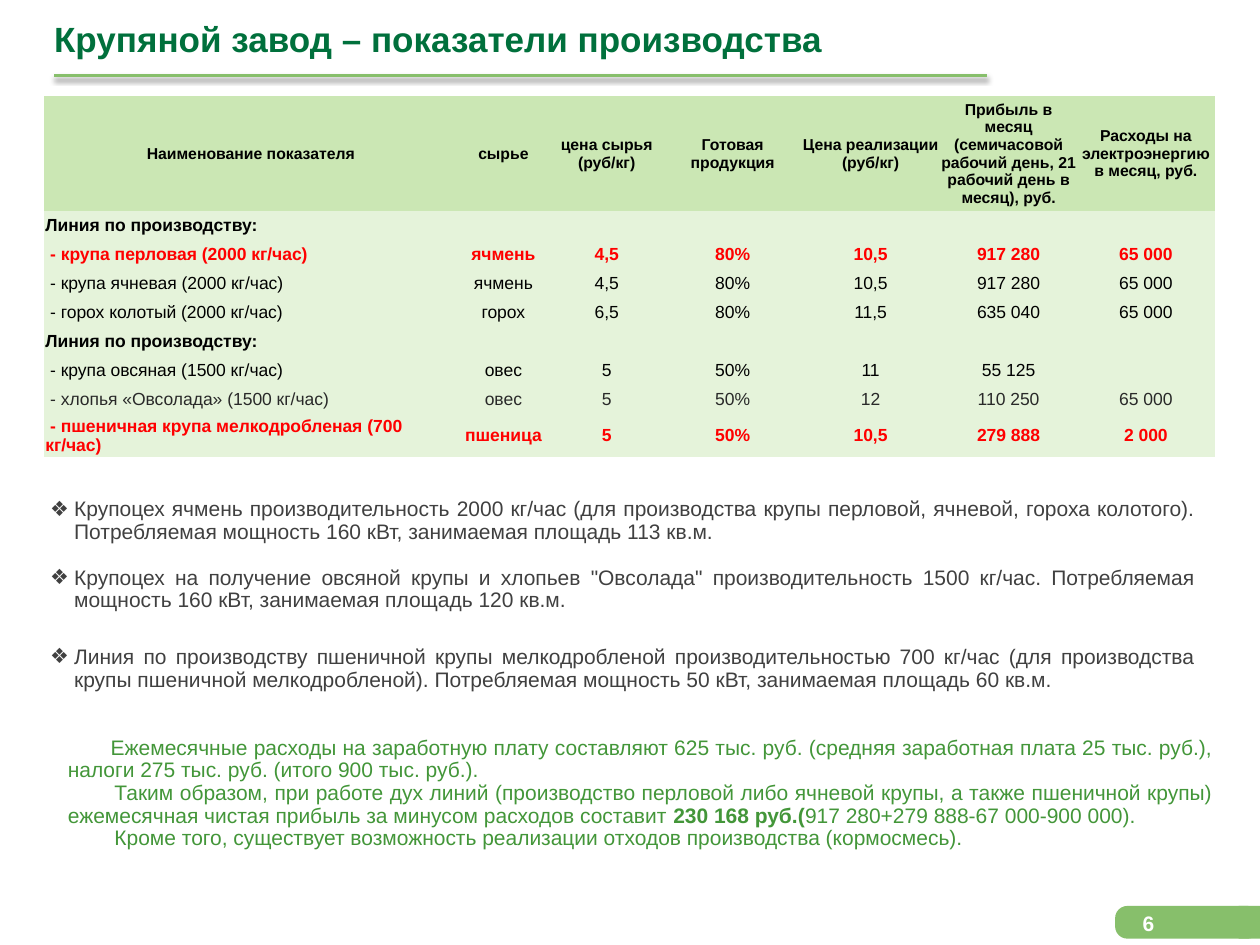
import pptx
import pptx.util
import pptx.dml.color
import pptx.enum.shapes
import pptx.enum.text
import pptx.oxml
import pptx.oxml.ns
from lxml import etree

Inches, Pt = pptx.util.Inches, pptx.util.Pt
Align = pptx.enum.text.PP_ALIGN
Anchor = pptx.enum.text.MSO_ANCHOR
Shape = pptx.enum.shapes.MSO_SHAPE
qn = pptx.oxml.ns.qn

TITLE = "Крупяной завод – показатели производства"
HEADS = [
    "Наименование показателя", "сырье", "цена сырья (руб/кг)",
    "Готовая продукция", "Цена реализации (руб/кг)",
    "Прибыль в месяц (семичасовой рабочий день, 21 рабочий день в месяц), руб.",
    "Расходы на электроэнергию в месяц, руб.",
]
GROUP = ["Линия по производству:", "", "", "", "", "", ""]
ROWS = [
    ("head", HEADS),
    ("group", GROUP),
    ("best", [" - крупа перловая (2000 кг/час)", "ячмень", "4,5", "80%", "10,5", "917 280", "65 000"]),
    ("plain", [" - крупа ячневая (2000 кг/час)", "ячмень", "4,5", "80%", "10,5", "917 280", "65 000"]),
    ("plain", [" - горох колотый (2000 кг/час)", "горох", "6,5", "80%", "11,5", "635 040", "65 000"]),
    ("group", GROUP),
    ("plain", [" - крупа овсяная (1500 кг/час)", "овес", "5", "50%", "11", "55 125", ""]),
    ("soft", [" - хлопья «Овсолада» (1500 кг/час)", "овес", "5", "50%", "12", "110 250", "65 000"]),
    ("best", [" - пшеничная крупа мелкодробленая (700 кг/час)", "пшеница", "5", "50%", "10,5", "279 888", "2 000"]),
]
STYLES = {
    "head": (9, "000000", True, "CBE7B4"),
    "group": (10, "000000", True, "E5F3DA"),
    "best": (10, "FF0000", True, "E5F3DA"),
    "plain": (10, "000000", False, "E5F3DA"),
    "soft": (10, "292929", False, "E5F3DA"),
}
WIDTHS = [3.28, 0.73, 0.91, 1.09, 1.1, 1.09, 1.09]
HEIGHTS = [0.86] + [0.23] * 7 + [0.31]
LINES = [
    (0, "Крупоцех ячмень производительность 2000 кг/час (для производства крупы перловой, ячневой, гороха колотого). Потребляемая мощность 160 кВт, занимаемая площадь 113 кв.м."),
    (13, "Крупоцех на получение овсяной крупы и хлопьев \"Овсолада\" производительность 1500 кг/час. Потребляемая мощность 160 кВт, занимаемая площадь 120 кв.м."),
    (19.5, "Линия по производству пшеничной крупы мелкодробленой производительностью 700 кг/час (для производства крупы пшеничной мелкодробленой). Потребляемая мощность 50 кВт, занимаемая площадь 60 кв.м."),
]
NOTES = [
    (0.34, [("Ежемесячные расходы на заработную плату составляют 625 тыс. руб. (средняя заработная плата 25 тыс. руб.), налоги 275 тыс. руб. (итого 900 тыс. руб.).", False)]),
    (0.37, [
        ("Таким образом, при работе дух линий (производство перловой либо ячневой крупы, а также пшеничной крупы) ежемесячная чистая прибыль за минусом расходов составит ", False),
        ("230 168 руб.(", True),
        ("917 280+279 888-67 000-900 000).", False),
    ]),
    (0.37, [("Кроме того, существует возможность реализации отходов производства (кормосмесь).", False)]),
]
GREEN = "87BF6B"


def color(code):
    return pptx.dml.color.RGBColor.from_string(code)


def apply(item, vals):
    for key, val in vals.items():
        setattr(item, key, val)


def write(para, text, size, ink, bold=False):
    run = para.add_run()
    run.text = text
    apply(run.font, {"name": "Arial", "size": Pt(size), "bold": bold})
    run.font.color.rgb = color(ink)


def space(para, align, before=0, line=0.9):
    apply(para, {"alignment": align, "line_spacing": line, "space_before": Pt(before)})


def indent(para, left, first):
    props = para._p.get_or_add_pPr()
    for key, val in (("marL", left), ("indent", first)):
        props.set(key, str(int(Inches(val))))
    return props


def add_box(slide, area, **vals):
    frame = slide.shapes.add_textbox(*map(Inches, area)).text_frame
    apply(frame, {"word_wrap": True, **vals})
    return frame


def next_para(frame, first):
    return frame.paragraphs[0] if first else frame.add_paragraph()


def add_tab(slide):
    for kind, left, width in ((Shape.ROUNDED_RECTANGLE, 8.85, 1.15), (Shape.RECTANGLE, 9.83, 0.17)):
        tab = slide.shapes.add_shape(kind, *map(Inches, (left, 7.19, width, 0.26)))
        tab.shadow.inherit = False
        tab.fill.solid()
        tab.fill.fore_color.rgb = color(GREEN)
        tab.line.fill.background()
        if kind == Shape.ROUNDED_RECTANGLE:
            tab.adjustments[0] = 0.375
    frame = add_box(slide, (8.97, 7.2, 0.7, 0.25), vertical_anchor=Anchor.MIDDLE)
    write(frame.paragraphs[0], "6", 12, "FFFFFF", True)


def add_title(slide):
    ends = map(Inches, (0.43, 0.6, 7.83, 0.6))
    rule = slide.shapes.add_connector(pptx.enum.shapes.MSO_CONNECTOR.STRAIGHT, *ends)
    rule.line.color.rgb = color(GREEN)
    rule.line.width = Pt(2)
    glow = etree.SubElement(rule._element.spPr, qn("a:effectLst"))
    shade = etree.SubElement(glow, qn("a:outerShdw"), blurRad=str(Pt(3.1)), dist=str(Pt(1.6)), dir="5400000", rotWithShape="0")
    tone = etree.SubElement(shade, qn("a:srgbClr"), val="000000")
    etree.SubElement(tone, qn("a:alpha"), val="38000")
    sides = ("margin_left", "margin_top", "margin_right", "margin_bottom")
    frame = add_box(slide, (0.43, 0.05, 7.4, 0.55), vertical_anchor=Anchor.MIDDLE, **dict.fromkeys(sides, 0))
    space(frame.paragraphs[0], Align.LEFT)
    write(frame.paragraphs[0], TITLE, 20, "00703C", True)


def add_grid(slide):
    area = map(Inches, (0.35, 0.76, sum(WIDTHS), sum(HEIGHTS)))
    table = slide.shapes.add_table(len(ROWS), len(WIDTHS), *area).table
    apply(table, {"first_row": False, "horz_banding": False})
    table._tbl.tblPr.find(qn("a:tableStyleId")).text = "{2D5ABB26-0587-4C30-8999-92F81FD0307C}"
    for col, width in zip(table.columns, WIDTHS):
        col.width = Inches(width)
    pad = Inches(0.01)
    for row, height, (kind, texts) in zip(table.rows, HEIGHTS, ROWS):
        row.height = Inches(height)
        size, ink, bold, fill = STYLES[kind]
        for num, (cell, text) in enumerate(zip(row.cells, texts)):
            apply(cell, {"margin_left": pad, "margin_top": pad, "margin_right": pad,
                         "margin_bottom": 0, "vertical_anchor": Anchor.MIDDLE})
            cell.fill.solid()
            cell.fill.fore_color.rgb = color(fill)
            para = cell.text_frame.paragraphs[0]
            space(para, Align.LEFT if num == 0 and kind != "head" else Align.CENTER, line=1.0)
            if text:
                write(para, text, size, ink, bold)
            else:
                etree.SubElement(para._p, qn("a:endParaRPr"), sz=str(size * 100))


def add_lines(slide):
    frame = add_box(slide, (0.3, 3.91, 9.29, 1.74))
    for num, (gap, text) in enumerate(LINES):
        para = next_para(frame, num == 0)
        space(para, Align.JUSTIFY, gap)
        props = indent(para, 0.19, -0.19)
        etree.SubElement(props, qn("a:buFont"), typeface="Arial")
        etree.SubElement(props, qn("a:buChar"), char="❖")
        write(para, text, 12, "404040")


def add_notes(slide):
    frame = add_box(slide, (0.44, 5.8, 9.29, 1.1))
    for num, (dent, runs) in enumerate(NOTES):
        para = next_para(frame, num == 0)
        space(para, Align.JUSTIFY)
        indent(para, 0, dent)
        for text, bold in runs:
            write(para, text, 12, "439639", bold)


def main():
    deck = pptx.Presentation()
    apply(deck, {"slide_width": Inches(10), "slide_height": Inches(7.5)})
    slide = deck.slides.add_slide(deck.slide_layouts[6])
    for step in (add_tab, add_title, add_grid, add_lines, add_notes):
        step(slide)
    deck.save("out.pptx")


if __name__ == "__main__":
    main()
